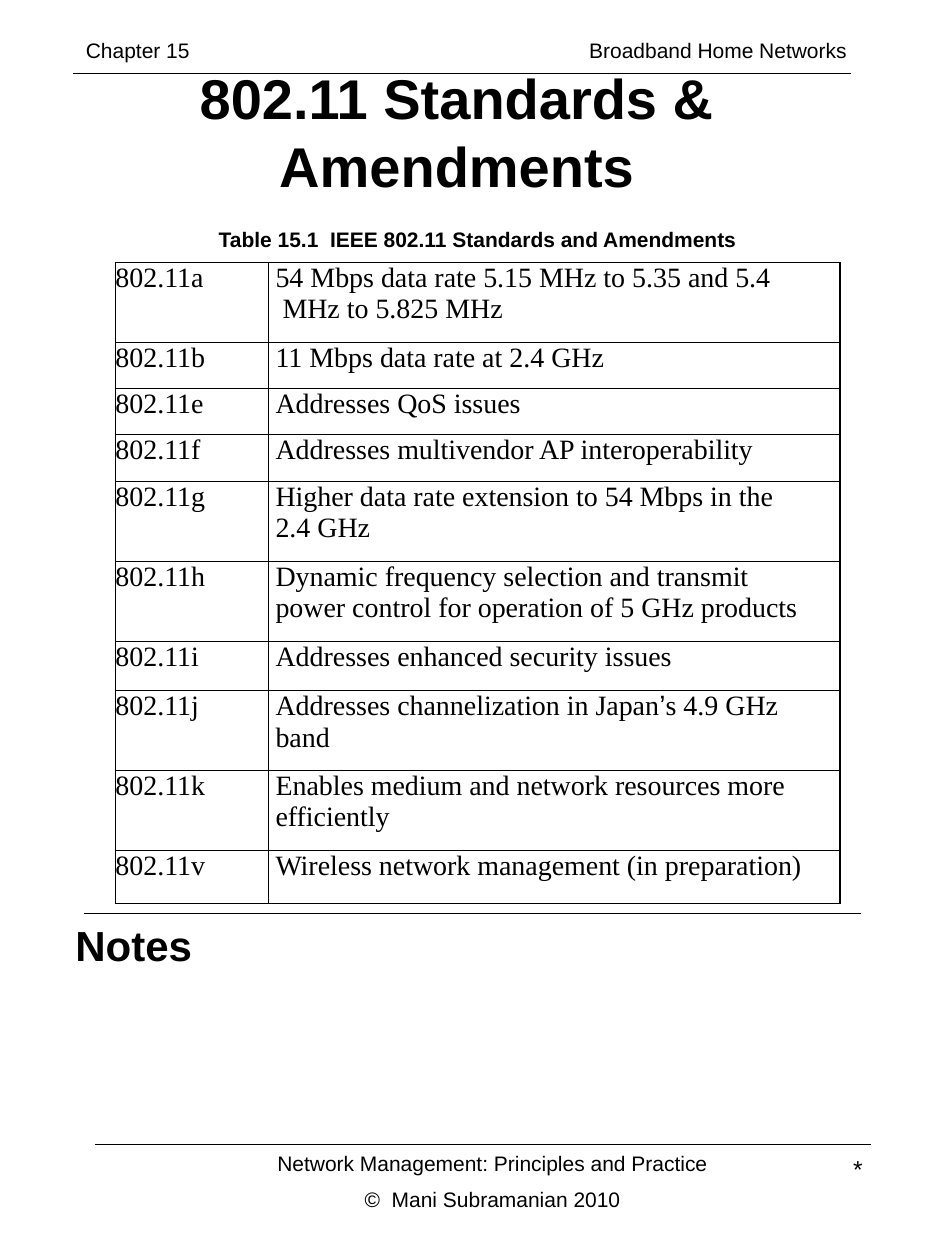
"""Build the notes page on 802.11 standards and amendments."""
from lxml import etree
from pptx import Presentation
from pptx.dml.color import RGBColor
from pptx.enum import shapes, text
from pptx.oxml import ns
from pptx.util import Pt

BLACK = RGBColor(0, 0, 0)
WHITE = RGBColor(255, 255, 255)
LEFT, CENTER, RIGHT = text.PP_ALIGN.LEFT, text.PP_ALIGN.CENTER, text.PP_ALIGN.RIGHT


def write(frame, content, size=12, font="Arial", bold=False, align=LEFT, gap=0):
    frame.word_wrap = True
    for number, line in enumerate(content.split("\n")):
        paragraph = frame.add_paragraph() if number else frame.paragraphs[0]
        paragraph.alignment = align
        paragraph.space_before = Pt(gap if number else 0)
        for row, words in enumerate(line.split("\v")):
            if row:
                paragraph.add_line_break()
            for piece in filter(None, words.partition("’")):
                run = paragraph.add_run()
                run.text = piece
                run.font.size = Pt(size)
                run.font.name = "Arial" if piece == "’" else font
                run.font.bold = bold
                run.font.color.rgb = BLACK


deck = Presentation()
deck.slide_width, deck.slide_height = Pt(540), Pt(720)
page = deck.slides.add_slide(deck.slide_layouts[6])
page.background.fill.solid()
page.background.fill.fore_color.rgb = WHITE

captions = [
    ((387.5, 656, 112.5, 48), "*", dict(size=14, align=RIGHT)),
    ((36, 42, 450, 66), "802.11 Standards & Amendments", dict(size=32, bold=True, align=CENTER)),
    ((144, 654, 275, 44), "Network Management: Principles and Practice\n©  Mani Subramanian 2010",
     dict(align=CENTER, gap=6)),
    ((42, 18, 453.6, 21.6), "Chapter 15\tBroadband Home Networks", {}),
    ((36, 522, 84, 36), "Notes", dict(size=24, bold=True)),
    ((66, 126, 414, 21.6), "Table 15.1  IEEE 802.11 Standards and Amendments", dict(bold=True, align=CENTER)),
]
for place, content, look in captions:
    frame = page.shapes.add_textbox(*map(Pt, place)).text_frame
    write(frame, content, **look)
    if place[1] == 42:
        frame.vertical_anchor = text.MSO_ANCHOR.MIDDLE
    if "\t" in content:
        properties = frame.paragraphs[0]._p.get_or_add_pPr()
        stops = etree.SubElement(properties, ns.qn("a:tabLst"))
        etree.SubElement(stops, ns.qn("a:tab"), pos=str(Pt(435)), algn="r")

for left, top in [(42, 42), (48, 522), (54, 654)]:
    rule = page.shapes.add_connector(
        shapes.MSO_CONNECTOR.STRAIGHT, Pt(left), Pt(top), Pt(left + 444), Pt(top))
    rule.line.color.rgb = BLACK
    rule.line.width = Pt(1)
    etree.SubElement(rule._element.spPr, ns.qn("a:effectLst"))

amendments = [
    ("a", "54 Mbps data rate 5.15 MHz to 5.35 and 5.4\v MHz to 5.825 MHz", 45.7),
    ("b", "11 Mbps data rate at 2.4 GHz", 26.4),
    ("e", "Addresses QoS issues", 26.4),
    ("f", "Addresses multivendor AP interoperability", 26.9),
    ("g", "Higher data rate extension to 54 Mbps in the\v2.4 GHz", 45.7),
    ("h", "Dynamic frequency selection and transmit\vpower control for operation of 5 GHz products", 45.7),
    ("i", "Addresses enhanced security issues", 28),
    ("j", "Addresses channelization in Japan’s 4.9 GHz\vband", 45.7),
    ("k", "Enables medium and network resources more\vefficiently", 45.7),
    ("v", "Wireless network management (in preparation)", 30.3),
]
total = sum(height for *_, height in amendments)
standards = page.shapes.add_table(len(amendments), 2, Pt(66), Pt(150), Pt(414), Pt(total)).table
standards.first_row = standards.horz_banding = False
standards.columns[0].width, standards.columns[1].width = Pt(87.5), Pt(326.5)
for row, (letter, purpose, height) in zip(standards.rows, amendments):
    row.height = Pt(height)
    for cell, content, indent in zip(row.cells, ("802.11" + letter, purpose), (0, 4)):
        cell.margin_left = Pt(indent)
        cell.margin_right = cell.margin_top = cell.margin_bottom = 0
        write(cell.text_frame, content, size=16, font="Times New Roman")
        for side in ("lnL", "lnR", "lnT", "lnB"):
            border = etree.SubElement(cell._tc.get_or_add_tcPr(), ns.qn("a:" + side), w=str(Pt(0.75)))
            ink = etree.SubElement(border, ns.qn("a:solidFill"))
            etree.SubElement(ink, ns.qn("a:srgbClr"), val=str(BLACK))
        cell.fill.background()

deck.save("out.pptx")
